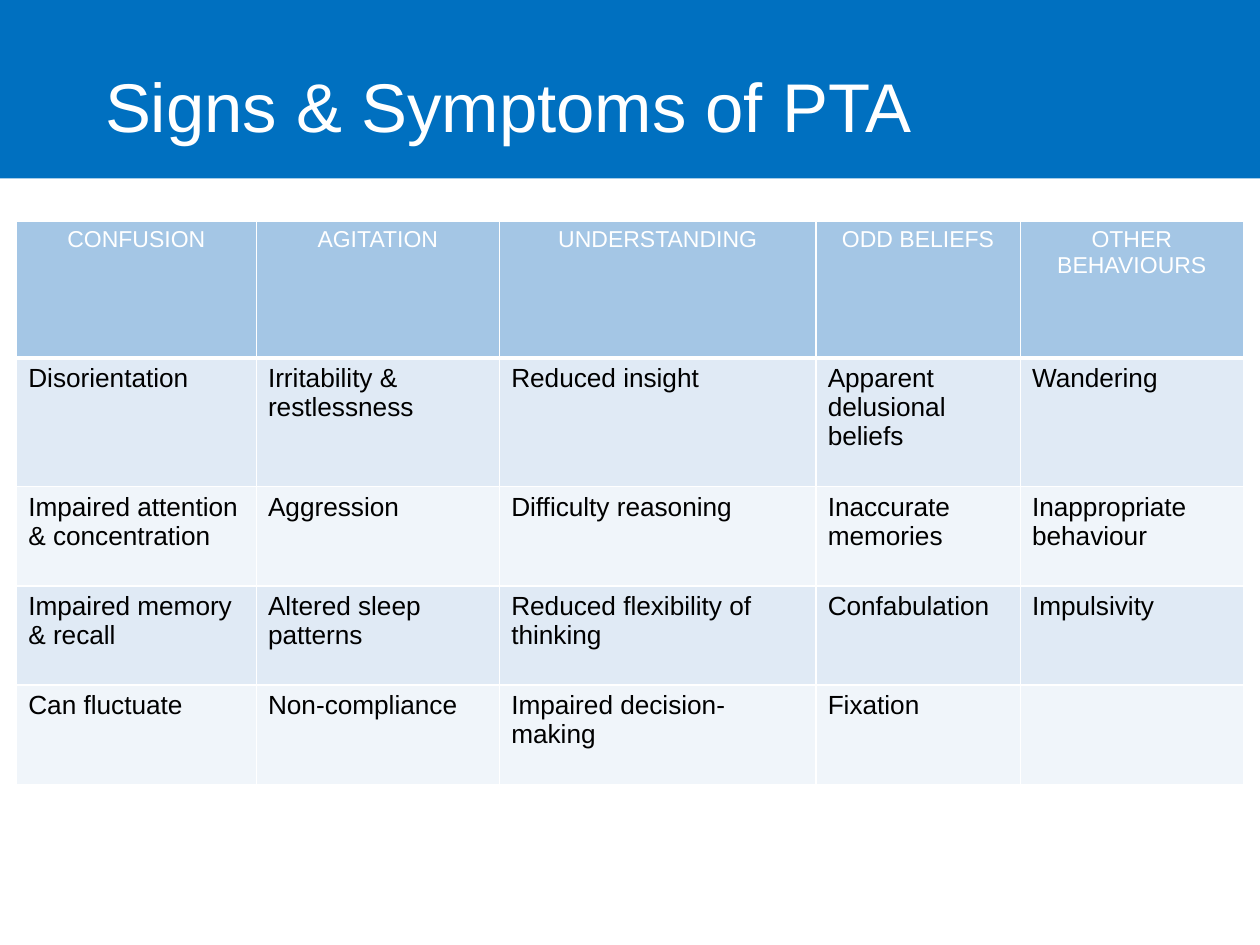
import pptx
import pptx.dml.color
import pptx.enum.shapes
import pptx.enum.text
import pptx.oxml
import pptx.oxml.ns
import pptx.util
from pptx.util import Inches

ALIGN = pptx.enum.text.PP_ALIGN
ANCHOR = pptx.enum.text.MSO_ANCHOR


class Theme:
    font = "Arial"
    white, black, banner = "FFFFFF", "000000", "0070C0"
    header, bands = "A4C6E5", ("E0EAF5", "F0F5FA")
    title_size, header_size, body_size = 42, 14, 16
    border, header_rule = 1, 3


class SlideBuilder:
    def __init__(self, deck, theme):
        self.theme = theme
        self.page = deck.slides.add_slide(deck.slide_layouts[6])

    def fill(self, target, color):
        target.fill.solid()
        target.fill.fore_color.rgb = pptx.dml.color.RGBColor.from_string(color)

    def add_text(self, frame, text, size, color, align):
        para = frame.paragraphs[0]
        para.alignment = align
        span = para.add_run()
        span.text = text
        formats = {"name": self.theme.font, "size": pptx.util.Pt(size), "bold": False}
        for name, value in formats.items():
            setattr(span.font, name, value)
        span.font.color.rgb = pptx.dml.color.RGBColor.from_string(color)

    def banner(self, text, left, top, width, height):
        box = self.page.shapes.add_shape(
            pptx.enum.shapes.MSO_SHAPE.RECTANGLE,
            Inches(left), Inches(top), Inches(width), Inches(height))
        box.shadow.inherit = False
        box.line.fill.background()
        self.fill(box, self.theme.banner)
        formats = {
            "word_wrap": True, "vertical_anchor": ANCHOR.MIDDLE,
            "margin_left": Inches(0.89), "margin_top": Inches(0.31),
            "margin_right": Inches(0.79), "margin_bottom": Inches(0.04),
        }
        for name, value in formats.items():
            setattr(box.text_frame, name, value)
        self.add_text(box.text_frame, text, self.theme.title_size, self.theme.white, ALIGN.LEFT)

    def borders(self, cell, bottom):
        properties = cell._tc.get_or_add_tcPr()
        for side in "LRTB":
            width = bottom if side == "B" else self.theme.border
            properties.append(pptx.oxml.parse_xml(
                f'<a:ln{side} {pptx.oxml.ns.nsdecls("a")} w="{pptx.util.Pt(width)}">'
                f'<a:solidFill><a:srgbClr val="{self.theme.white}"/></a:solidFill></a:ln{side}>'))

    def table(self, rows, left, top, widths, heights):
        theme = self.theme
        table = self.page.shapes.add_table(
            len(rows), len(widths), Inches(left), Inches(top),
            Inches(sum(widths)), Inches(sum(heights))).table
        table.horz_banding = False
        for column, width in zip(table.columns, widths):
            column.width = Inches(width)
        for index, (row, height, texts) in enumerate(zip(table.rows, heights, rows)):
            row.height = Inches(height)
            if index == 0:
                color, rule = theme.header, theme.header_rule
                style = (theme.header_size, theme.white, ALIGN.CENTER)
            else:
                color, rule = theme.bands[(index - 1) % 2], theme.border
                style = (theme.body_size, theme.black, ALIGN.LEFT)
            for cell, text in zip(row.cells, texts):
                self.borders(cell, rule)
                self.fill(cell, color)
                if text:
                    self.add_text(cell.text_frame, text, *style)


def main():
    deck = pptx.Presentation()
    deck.slide_width, deck.slide_height = Inches(10.67), Inches(8)
    slide = SlideBuilder(deck, Theme())

    # Title banner
    slide.banner("Signs & Symptoms of PTA", 0, 0, 10.67, 1.51)

    # Symptom table, one column per group
    groups = {
        "CONFUSION": ("Disorientation", "Impaired attention & concentration",
                      "Impaired memory & recall", "Can fluctuate"),
        "AGITATION": ("Irritability & restlessness", "Aggression",
                      "Altered sleep patterns", "Non-compliance"),
        "UNDERSTANDING": ("Reduced insight", "Difficulty reasoning",
                          "Reduced flexibility of thinking", "Impaired decision-making"),
        "ODD BELIEFS": ("Apparent delusional beliefs", "Inaccurate memories",
                        "Confabulation", "Fixation"),
        "OTHER BEHAVIOURS": ("Wandering", "Inappropriate behaviour", "Impulsivity", ""),
    }
    rows = [tuple(groups), *zip(*groups.values())]
    slide.table(rows, 0.14, 1.87, (2.03, 2.06, 2.68, 1.73, 1.89),
                (1.16, 1.09, 0.84, 0.84, 0.84))

    deck.save("out.pptx")


if __name__ == "__main__":
    main()
